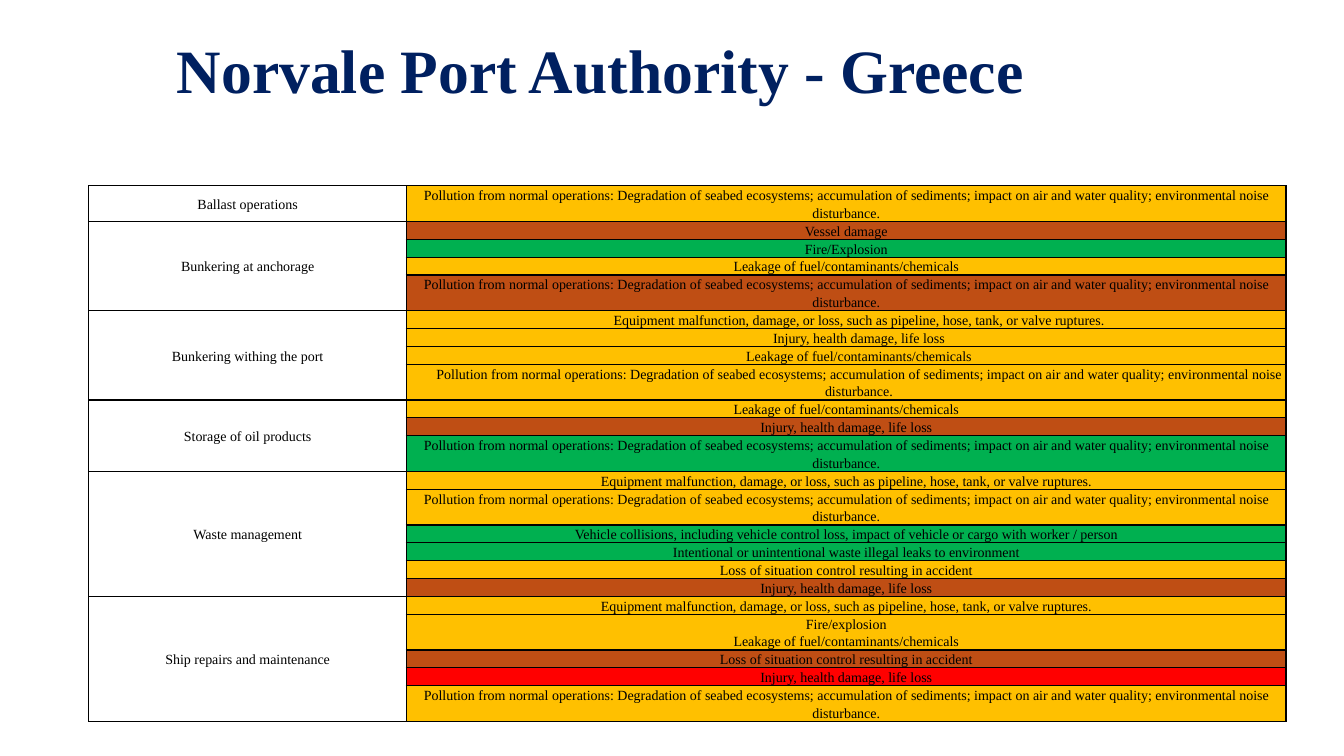
from pptx import Presentation
from pptx.dml.color import RGBColor
from pptx.enum.text import MSO_ANCHOR as Anchor, PP_ALIGN as Align
from pptx.oxml import parse_xml
from pptx.oxml.ns import nsdecls
from pptx.util import Cm, Pt

FONT = "Times New Roman"
AMBER, BROWN, GREEN, RED = "FFC000", "BF4E14", "00B050", "FF0000"
LINE_HEIGHT = 0.45

POLLUTION = (
    "Pollution from normal operations: Degradation of seabed ecosystems; "
    "accumulation of sediments; impact on air and water quality; "
    "environmental noise disturbance."
)
EQUIPMENT = (
    "Equipment malfunction, damage, or loss, such as pipeline, hose, tank, "
    "or valve ruptures."
)
COLLISION = (
    "Vehicle collisions, including vehicle control loss, impact of vehicle "
    "or cargo with worker / person"
)
LEAKAGE = "Leakage of fuel/contaminants/chemicals"
INJURY = "Injury, health damage, life loss"
CONTROL = "Loss of situation control resulting in accident"
ILLEGAL = "Intentional or unintentional waste illegal leaks to environment"

operations = [
    ("Ballast operations", 0, [(POLLUTION, AMBER)]),
    ("Bunkering at anchorage", 0, [
        ("Vessel damage", BROWN), ("Fire/Explosion", GREEN),
        (LEAKAGE, AMBER), (POLLUTION, BROWN)]),
    ("Bunkering withing the port", 0.64, [
        (EQUIPMENT, AMBER), (INJURY, AMBER),
        (LEAKAGE, AMBER), (POLLUTION, AMBER)]),
    ("Storage of oil products", 0, [
        (LEAKAGE, AMBER), (INJURY, BROWN), (POLLUTION, GREEN)]),
    ("Waste management", 0, [
        (EQUIPMENT, AMBER), (POLLUTION, AMBER), (COLLISION, GREEN),
        (ILLEGAL, GREEN), (CONTROL, AMBER), (INJURY, BROWN)]),
    ("Ship repairs and maintenance", 0, [
        (EQUIPMENT, AMBER), ("Fire/explosion\n" + LEAKAGE, AMBER),
        (CONTROL, BROWN), (INJURY, RED), (POLLUTION, AMBER)]),
]


def color(value):
    return RGBColor.from_string(value)


def fill_cell(cell, text, indent=0):
    cell.text = text
    cell.vertical_anchor = Anchor.MIDDLE
    cell.margin_left = cell.margin_right = Cm(0.05)
    cell.margin_top = cell.margin_bottom = 0
    for paragraph in cell.text_frame.paragraphs:
        if indent:
            paragraph._p.get_or_add_pPr().set("marL", str(Cm(indent)))
        paragraph.alignment = Align.CENTER
        paragraph.line_spacing = 1.15
        paragraph.font.name = FONT
        paragraph.font.size = Pt(10)
        paragraph.font.color.rgb = color("000000")


deck = Presentation()
deck.slide_width, deck.slide_height = Cm(33.87), Cm(19.05)
slide = deck.slides.add_slide(deck.slide_layouts[5])

title = slide.shapes.title
title.left, title.top, title.width, title.height = Cm(3.56), 0, Cm(23.16), Cm(3.73)
title.text_frame.text = "Norvale Port Authority - Greece"
title.text_frame.vertical_anchor = Anchor.MIDDLE
heading = title.text_frame.paragraphs[0]
heading.alignment = Align.CENTER
heading.line_spacing = 0.9
heading.font.name = FONT
heading.font.size = Pt(44)
heading.font.bold = True
heading.font.color.rgb = color("002060")

row_lines = [
    2 if text == POLLUTION or "\n" in text else 1
    for _, _, risks in operations for text, _ in risks
]
risk_table = slide.shapes.add_table(
    len(row_lines), 2, Cm(2.24), Cm(4.68), Cm(30.17), Cm(LINE_HEIGHT * sum(row_lines))
).table
risk_table.first_row = risk_table.horz_banding = False
risk_table.columns[0].width = Cm(8)
risk_table.columns[1].width = Cm(22.17)
for row, lines in zip(risk_table.rows, row_lines):
    row.height = Cm(LINE_HEIGHT * lines)

for cell in risk_table.iter_cells():
    for edge in ("lnL", "lnR", "lnT", "lnB"):
        cell._tc.get_or_add_tcPr().append(parse_xml(
            f'<a:{edge} {nsdecls("a")} w="{Pt(1)}"><a:solidFill>'
            f'<a:srgbClr val="000000"/></a:solidFill></a:{edge}>'))
    cell.fill.background()
    fill_cell(cell, "")

first = 0
for operation, indent, risks in operations:
    operation_cell = risk_table.cell(first, 0)
    if len(risks) > 1:
        operation_cell.merge(risk_table.cell(first + len(risks) - 1, 0))
    fill_cell(operation_cell, operation)
    for offset, (text, level) in enumerate(risks):
        risk_cell = risk_table.cell(first + offset, 1)
        fill_cell(risk_cell, text, indent)
        risk_cell.fill.solid()
        risk_cell.fill.fore_color.rgb = color(level)
    first += len(risks)

deck.save("out.pptx")
